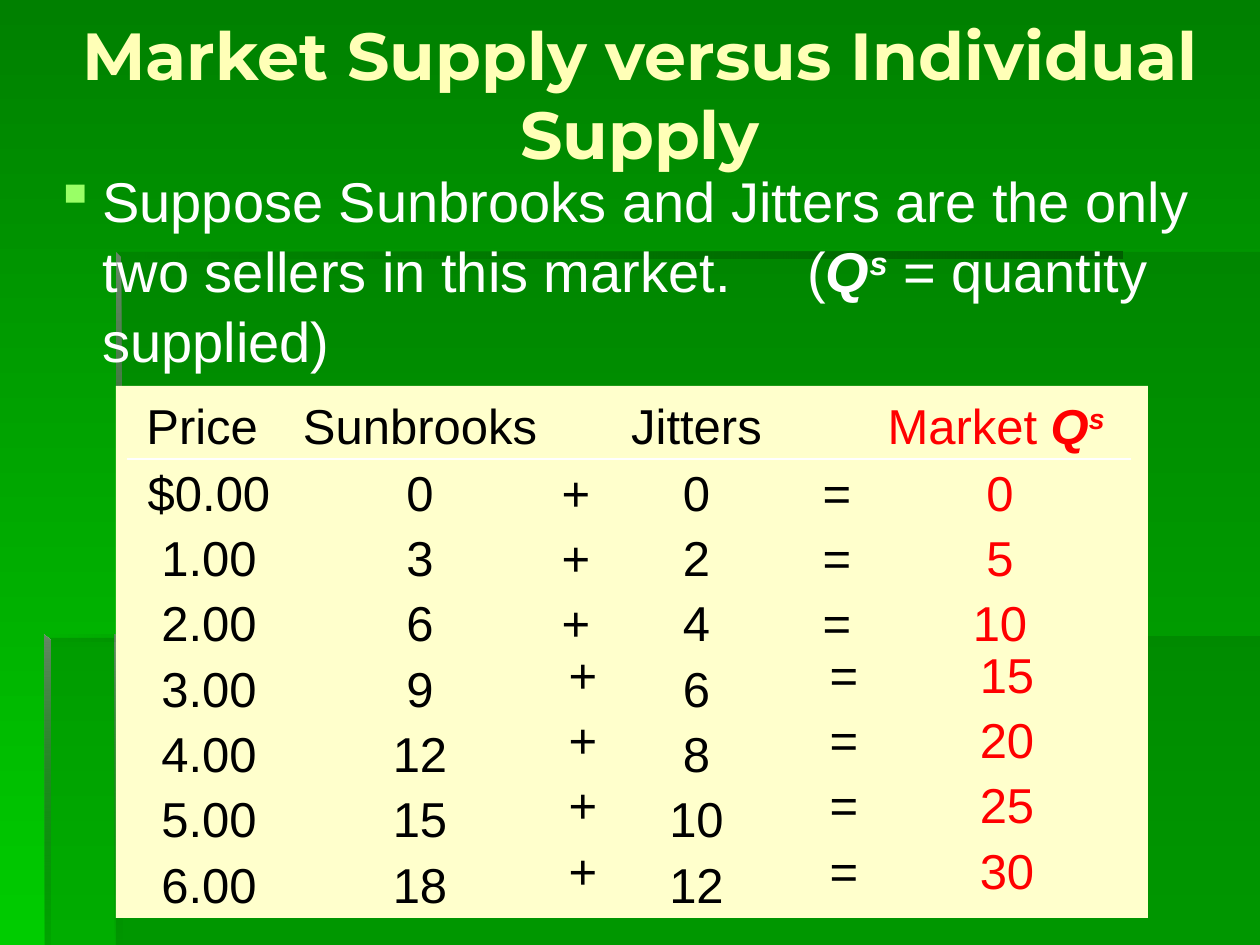
"""Slide comparing market supply with the supply of two individual sellers."""
from lxml import etree
from pptx import Presentation
from pptx.dml.color import RGBColor
from pptx.enum.shapes import MSO_CONNECTOR, MSO_SHAPE
from pptx.enum.text import MSO_ANCHOR, MSO_AUTO_SIZE, PP_ALIGN
from pptx.oxml.ns import qn
from pptx.util import Pt

PX = 914400 // 126
LEFT, CENTER = PP_ALIGN.LEFT, PP_ALIGN.CENTER
TOP, MIDDLE = MSO_ANCHOR.TOP, MSO_ANCHOR.MIDDLE
RECT, STRAIGHT = MSO_SHAPE.RECTANGLE, MSO_CONNECTOR.STRAIGHT
NO_FIT = MSO_AUTO_SIZE.NONE
C = {
    "top": "008000", "bottom": "00CC00", "shade": "006600", "deep": "005E00",
    "edge": "668666", "cream": "FFFFCC", "title": "FFFFB7", "bullet": "99FF66",
    "white": "FFFFFF", "black": "000000", "red": "FF0000",
}

prs = Presentation()
prs.slide_width, prs.slide_height = 1260 * PX, 945 * PX
s = prs.slides.add_slide(prs.slide_layouts[5])


def write(text, at, sp=None, size=28, color="black", font="Arial", bold=False,
          align=CENTER, anchor=MIDDLE, wrap=False):
    """Write a string or a list of (string, style) runs into a box."""
    if sp is None:
        sp = s.shapes.add_textbox(0, 0, 0, 0)
    sp.left, sp.top, sp.width, sp.height = [v * PX for v in at]
    tf = sp.text_frame
    tf.word_wrap, tf.auto_size, tf.vertical_anchor = wrap, NO_FIT, anchor
    p = tf.paragraphs[0]
    p.alignment = align
    for part, style in [(text, "plain")] if isinstance(text, str) else text:
        r = p.add_run()
        r.text = part
        r.font.name, r.font.size = font, Pt(size)
        r.font.color.rgb = RGBColor.from_string(C[color])
        r.font.bold = bold or style != "plain"
        r.font.italic = style != "plain"
        if style == "super":
            r._r.get_or_add_rPr().set("baseline", "30000")
    return p


def panel(points, stops, angle=0):
    """Draw an outline filled with one (colour, opacity) stop or a gradient of two."""
    builder = s.shapes.build_freeform(*points[0], scale=PX)
    builder.add_line_segments(points[1:], close=True)
    sp = builder.convert_to_shape()
    sp.shadow.inherit = False
    sp.line.fill.background()
    if len(stops) == 1:
        sp.fill.solid()
        colors = [sp.fill.fore_color]
    else:
        sp.fill.gradient()
        sp.fill.gradient_angle = angle
        colors = [stop.color for stop in sp.fill.gradient_stops]
    for color, (name, _) in zip(colors, stops):
        color.rgb = RGBColor.from_string(C[name])
    for node, (_, opacity) in zip(sp._element.spPr.iter(qn("a:srgbClr")), stops):
        if opacity < 100:
            etree.SubElement(node, qn("a:alpha")).set("val", str(opacity * 1000))


bg = s.background.fill
bg.gradient()
bg.gradient_angle = 270
for stop, name in zip(bg.gradient_stops, ("top", "bottom")):
    stop.color.rgb = RGBColor.from_string(C[name])

shade = [("shade", 30)]
fade_in = [("shade", 0), ("deep", 100)]
panel([(116, 636), (116, 945), (1260, 945), (1260, 636)], shade)
panel([(118, 638), (45, 638), (45, 945), (1260, 945), (1260, 252), (118, 252)], shade)
panel([(116, 252), (116, 258), (1123, 258), (1123, 252)], fade_in)
panel([(116, 252), (116, 643), (122, 643), (121, 257)],
      [("edge", 100), ("shade", 100)], 270)
panel([(115, 945), (122, 945), (121, 640), (115, 635)],
      [("edge", 100), ("shade", 0)], 270)
panel([(44, 635), (44, 641), (674, 641), (674, 635)], fade_in)
panel([(44, 635), (44, 945), (50, 945), (50, 641)],
      [("edge", 100), ("shade", 10)], 270)

write("Market Supply versus Individual Supply", (20, 53, 1240, 81), s.shapes.title,
      size=38, color="title", font="Montserrat", bold=True, wrap=True)

p = write([("Suppose Sunbrooks and Jitters are the only two sellers in this market.\t(", "plain"),
           ("Q", "variable"), ("s", "super"), (" = quantity supplied)", "plain")],
          (42, 158, 1174, 214), size=32, color="white", align=LEFT, anchor=TOP, wrap=True)
p.line_spacing = 1.04
pPr = p._p.get_or_add_pPr()
pPr.set("marL", str(48 * PX))
pPr.set("indent", str(-48 * PX))
color = etree.SubElement(pPr, qn("a:buClr"))
etree.SubElement(color, qn("a:srgbClr")).set("val", C["bullet"])
etree.SubElement(pPr, qn("a:buChar")).set("char", "▪")
tabs = etree.SubElement(pPr, qn("a:tabLst"))
tab = etree.SubElement(tabs, qn("a:tab"))
tab.set("pos", str(753 * PX))
tab.set("algn", "l")

card = s.shapes.add_shape(RECT, 116 * PX, 386 * PX, 1032 * PX, 532 * PX)
card.shadow.inherit = False
card.fill.solid()
card.fill.fore_color.rgb = RGBColor.from_string(C["cream"])
card.line.fill.background()
rule = s.shapes.add_connector(STRAIGHT, 127 * PX, 459 * PX, 1131 * PX, 459 * PX)
rule.line.color.rgb = RGBColor.from_string(C["white"])
rule.line.width = Pt(1)
etree.SubElement(rule._element.spPr, qn("a:effectLst"))

market = [("Market ", "plain"), ("Q", "variable"), ("s ", "super")]
columns = [
    ("Price ", 127, 164, "black", ["$0.00"] + [f"{i}.00" for i in range(1, 7)]),
    ("Sunbrooks", 291, 258, "black", range(0, 21, 3)),
    ("", 549, 54, "black", "+" * 7),
    ("Jitters", 586, 221, "black", range(0, 14, 2)),
    ("", 806, 62, "black", "=" * 7),
    (market, 869, 262, "red", range(0, 35, 5)),
]
for heading, x, w, color, values in columns:
    if heading:
        write(heading, (x, 391, w, 68), color=color)
    for i, value in enumerate(values):
        shifted = i > 2 and (not heading or heading is market)
        dx, dy = (7, -14) if shifted else (0, 0)
        write(str(value), (x + dx, 459 + i * 196 // 3 + dy, w, 65), color=color)

prs.save("out.pptx")
